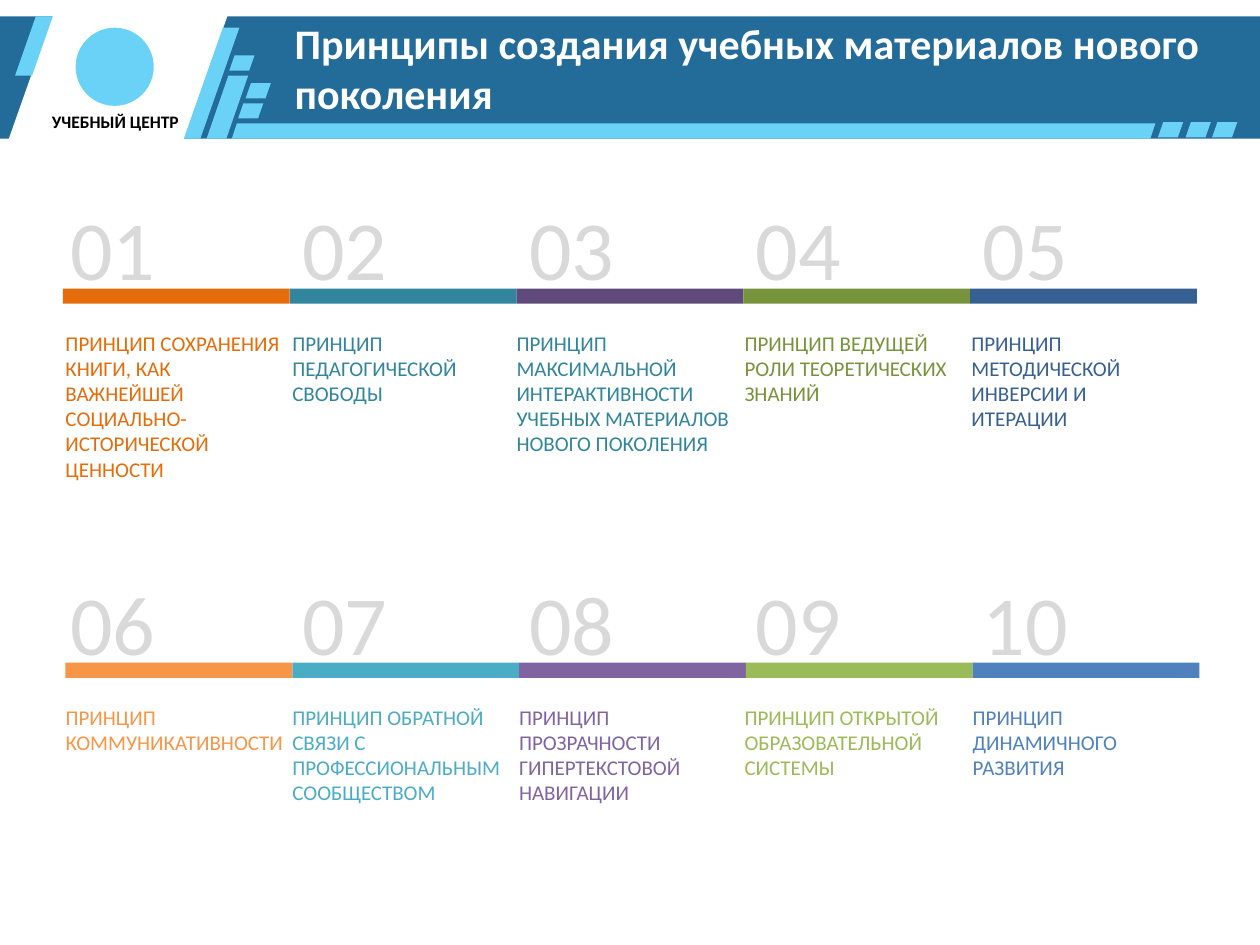
from typing import NamedTuple

from pptx import Presentation
from pptx import util as u
from pptx.dml.color import RGBColor
from pptx.enum import shapes, text

COLORS = {
    "banner": "236C99", "accent": "69D2F6", "white": "FFFFFF",
    "black": "000000", "number": "D9D9D9",
    "orange": "E46C0A", "teal": "31859C", "purple": "604A7B",
    "green": "77933C", "blue": "376092",
    "light_orange": "F79646", "light_teal": "4BACC6", "light_purple": "8064A2",
    "light_green": "9BBB59", "light_blue": "4F81BD",
}
FONT = "Calibri"
COLUMN = 1.8
BAR_HEIGHT = 0.12
LINE_12PT = 0.2  # height of one 12 pt line, kept free above each label


class Stripe(NamedTuple):
    left: float
    top: float
    width: float
    height: float
    slant: float
    color: str = "accent"


class Principle(NamedTuple):
    label: str
    bar_color: str
    label_color: str
    label_left: float
    label_width: float = COLUMN


class Row(NamedTuple):
    bar_left: float
    bar_top: float
    number_top: float
    label_top: float
    label_height: float
    principles: list[Principle]


STRIPES = [
    Stripe(0, 0, 1.85, 1.3, 0.353, "white"),
    Stripe(0.12, 0.13, 0.3, 0.47, 0.549),
    Stripe(1.46, 0.22, 0.44, 0.88, 0.703),
    Stripe(1.64, 0.6, 0.33, 0.5, 0.525),
] + [
    Stripe(left, top, 0.2, 0.12, 0.348)
    for left, top in [(1.82, 0.44), (1.89, 0.82), (1.95, 0.66),
                      (9.19, 0.97), (9.41, 0.97), (9.62, 0.97)]
]

ROWS = [
    Row(0.5, 2.29, 1.51, 2.42, 1.49, [
        Principle("ПРИНЦИП СОХРАНЕНИЯ КНИГИ, КАК ВАЖНЕЙШЕЙ "
                  "СОЦИАЛЬНО-ИСТОРИЧЕСКОЙ ЦЕННОСТИ", "orange", "orange", 0.52),
        Principle("ПРИНЦИП ПЕДАГОГИЧЕСКОЙ СВОБОДЫ", "teal", "teal", 2.32),
        Principle("ПРИНЦИП МАКСИМАЛЬНОЙ ИНТЕРАКТИВНОСТИ УЧЕБНЫХ "
                  "МАТЕРИАЛОВ НОВОГО ПОКОЛЕНИЯ", "purple", "teal", 4.1),
        Principle("ПРИНЦИП ВЕДУЩЕЙ РОЛИ ТЕОРЕТИЧЕСКИХ ЗНАНИЙ",
                  "green", "green", 5.91),
        Principle("ПРИНЦИП МЕТОДИЧЕСКОЙ ИНВЕРСИИ И ИТЕРАЦИИ",
                  "blue", "blue", 7.71),
    ]),
    Row(0.52, 5.26, 4.49, 5.39, 1.74, [
        Principle("ПРИНЦИП КОММУНИКАТИВНОСТИ",
                  "light_orange", "light_orange", 0.52, 1.85),
        Principle("ПРИНЦИП ОБРАТНОЙ СВЯЗИ С ПРОФЕССИОНАЛЬНЫМ СООБЩЕСТВОМ",
                  "light_teal", "light_teal", 2.32),
        Principle("ПРИНЦИП ПРОЗРАЧНОСТИ ГИПЕРТЕКСТОВОЙ НАВИГАЦИИ",
                  "light_purple", "light_purple", 4.12),
        Principle("ПРИНЦИП ОТКРЫТОЙ ОБРАЗОВАТЕЛЬНОЙ СИСТЕМЫ",
                  "light_green", "light_green", 5.91),
        Principle("ПРИНЦИП ДИНАМИЧНОГО РАЗВИТИЯ",
                  "light_blue", "light_blue", 7.72),
    ]),
]


def paint(shape, color: str) -> None:
    shape.shadow.inherit = False
    shape.fill.solid()
    shape.fill.fore_color.rgb = RGBColor.from_string(COLORS[color])
    shape.line.fill.background()


def add_block(slide, kind, left: float, top: float, width: float,
              height: float, color: str):
    block = slide.shapes.add_shape(
        kind, u.Inches(left), u.Inches(top), u.Inches(width), u.Inches(height))
    paint(block, color)
    return block


def add_stripe(slide, stripe: Stripe) -> None:
    block = add_block(slide, shapes.MSO_SHAPE.PARALLELOGRAM, stripe.left,
                      stripe.top, stripe.width, stripe.height, stripe.color)
    block.adjustments[0] = stripe.slant


def add_text(slide, wording: str, left: float, top: float, width: float,
             height: float, size: int, color: str, bold: bool = False,
             wrap: bool = True):
    box = slide.shapes.add_textbox(
        u.Inches(left), u.Inches(top), u.Inches(width), u.Inches(height))
    frame = box.text_frame
    frame.word_wrap = wrap
    frame.text = wording
    font = frame.paragraphs[0].runs[0].font
    font.name, font.size, font.bold = FONT, u.Pt(size), bold
    font.color.rgb = RGBColor.from_string(COLORS[color])
    return frame


def add_banner(slide) -> None:
    add_block(slide, shapes.MSO_SHAPE.RECTANGLE, 0, 0.13, 10, 0.97, "banner")
    for stripe in STRIPES:
        add_stripe(slide, stripe)

    # Long underline with slanted ends
    outline = slide.shapes.build_freeform(u.Inches(1.88), u.Inches(0.98))
    outline.add_line_segments([
        (u.Inches(x), u.Inches(y))
        for x, y in [(9.17, 0.98), (9.13, 1.1), (1.84, 1.1)]])
    paint(outline.convert_to_shape(), "accent")

    # Emblem and organisation name
    add_block(slide, shapes.MSO_SHAPE.OVAL, 0.6, 0.22, 0.62, 0.62, "accent")
    company = add_text(slide, "УЧЕБНЫЙ ЦЕНТР", 0.29, 0.83, 1.25, 0.27,
                       10, "black", bold=True, wrap=False)
    company.paragraphs[0].alignment = text.PP_ALIGN.CENTER

    add_text(slide, "Принципы создания учебных материалов нового поколения",
             2.24, 0.09, 7.58, 0.91, 24, "white", bold=True)


def add_row(slide, row: Row, first_number: int) -> None:
    for column, principle in enumerate(row.principles):
        add_block(slide, shapes.MSO_SHAPE.RECTANGLE,
                  row.bar_left + column * COLUMN, row.bar_top,
                  COLUMN, BAR_HEIGHT, principle.bar_color)
        label = add_text(slide, principle.label, principle.label_left,
                         row.label_top, principle.label_width,
                         row.label_height, 12, principle.label_color)
        label.margin_left = label.margin_bottom = 0
        label.margin_top = u.Inches(LINE_12PT)
        number_left = 0.5 + column * COLUMN if column else 0.46
        add_text(slide, f"{first_number + column:02d}", number_left,
                 row.number_top, 0.89, 0.91, 48, "number", wrap=False)


def main() -> None:
    deck = Presentation()
    deck.slide_width, deck.slide_height = u.Inches(10), u.Inches(7.5)
    slide = deck.slides.add_slide(deck.slide_layouts[6])
    add_banner(slide)
    first_number = 1
    for row in ROWS:
        add_row(slide, row, first_number)
        first_number += len(row.principles)
    deck.save("out.pptx")


if __name__ == "__main__":
    main()
